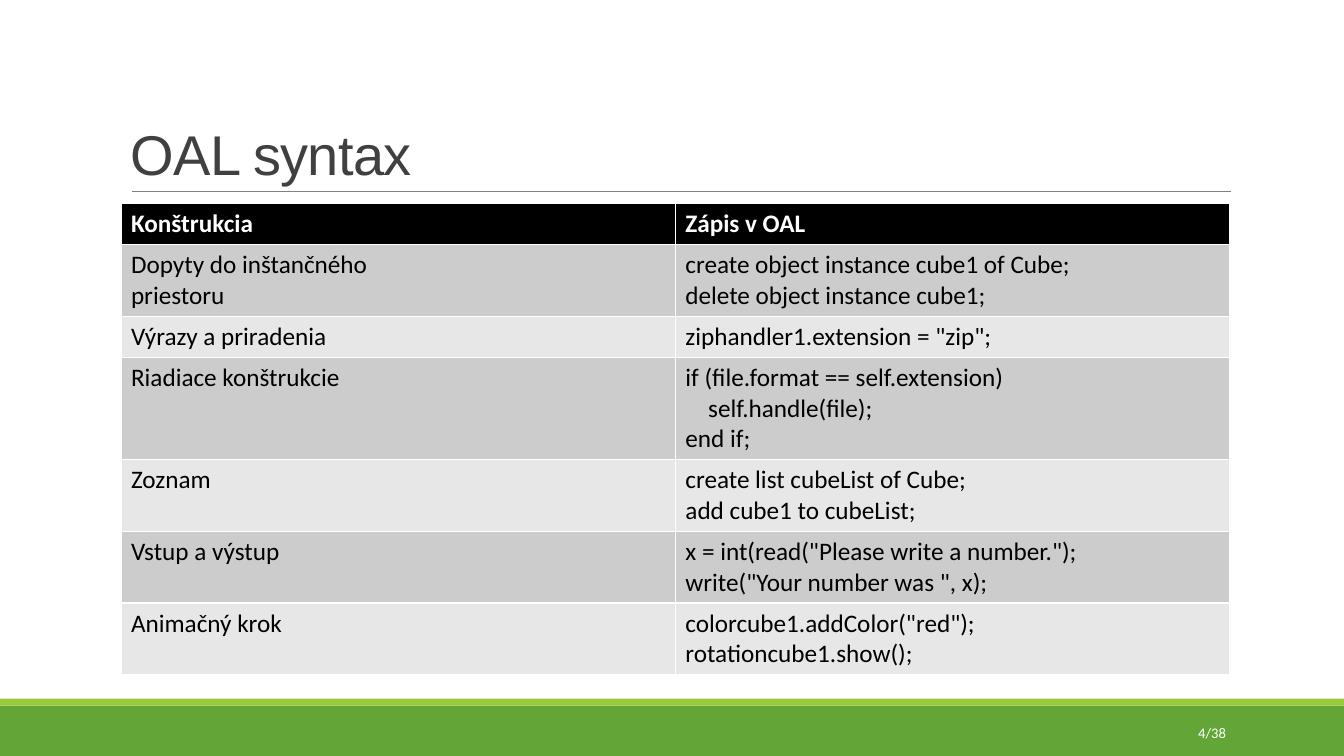
import pptx
import pptx.dml.color
import pptx.enum.shapes
import pptx.enum.text
import pptx.oxml.ns
import pptx.oxml.xmlchemy
import pptx.util

Pt = pptx.util.Pt
ALIGN = pptx.enum.text.PP_ALIGN
ANCHOR = pptx.enum.text.MSO_ANCHOR
ROWS = [
    ("Konštrukcia", "Zápis v OAL"),
    ("Dopyty do inštančného\npriestoru",
     "create object instance cube1 of Cube;\ndelete object instance cube1;"),
    ("Výrazy a priradenia", 'ziphandler1.extension = "zip";'),
    ("Riadiace konštrukcie",
     "if (file.format == self.extension)\n    self.handle(file);\nend if;"),
    ("Zoznam", "create list cubeList of Cube;\nadd cube1 to cubeList;"),
    ("Vstup a výstup",
     'x = int(read("Please write a number.");\nwrite("Your number was ", x);'),
    ("Animačný krok", 'colorcube1.addColor("red");\nrotationcube1.show();'),
]


def paint(fill, color):
    """Give a fill one solid colour."""
    fill.solid()
    fill.fore_color.rgb = pptx.dml.color.RGBColor.from_string(color)


def style(par, name, size, color, bold=False):
    """Set the font of a paragraph."""
    font = par.font
    font.name, font.size, font.bold = name, Pt(size), bold
    paint(font.fill, color)


def add_bar(slide, top, height, color):
    """Add a band across the whole slide."""
    bar = slide.shapes.add_shape(
        pptx.enum.shapes.MSO_SHAPE.RECTANGLE, 0, Pt(top), Pt(960), Pt(height))
    bar.shadow.inherit = False
    paint(bar.fill, color)
    bar.line.fill.background()


def add_rule(slide, left, right, top):
    """Add the thin line under the title."""
    rule = slide.shapes.add_connector(
        pptx.enum.shapes.MSO_CONNECTOR.STRAIGHT,
        Pt(left), Pt(top), Pt(right), Pt(top))
    paint(rule.line.fill, "808080")
    rule.line.width = Pt(0.5)
    rule._element.spPr.append(
        pptx.oxml.xmlchemy.OxmlElement("a:effectLst"))


def add_text(slide, text, box, anchor, align):
    """Add a text box and return its paragraph."""
    frame = slide.shapes.add_textbox(*map(Pt, box)).text_frame
    frame.word_wrap = True
    frame.vertical_anchor = anchor
    par = frame.paragraphs[0]
    par.text = text
    par.alignment = align
    return par


def add_title(slide, text):
    """Add the slide title with tight spacing."""
    par = add_text(slide, text, (86.4, 22.3, 792, 114.5),
                   ANCHOR.BOTTOM, ALIGN.LEFT)
    par.line_spacing = 0.85
    style(par, "Arial", 40, "404040")
    par._p.pPr.find(pptx.oxml.ns.qn("a:defRPr")).set("spc", "-50")


def add_grid(slide, rows):
    """Add the syntax table, each row as tall as its text."""
    grid = slide.shapes.add_table(
        len(rows), 2, Pt(86.4), Pt(145.6), Pt(792), Pt(332)).table
    for i, row in enumerate(rows):
        extra = max(text.count("\n") for text in row)
        grid.rows[i].height = Pt(29.2 + 22 * extra)
        head = i == 0
        shade = "000000" if head else ("E7E7E7", "CCCCCC")[i % 2]
        for j, text in enumerate(row):
            cell = grid.cell(i, j)
            paint(cell.fill, shade)
            par = cell.text_frame.paragraphs[0]
            par.text = text
            style(par, "Calibri", 18, "FFFFFF" if head else "000000", head)


def main():
    """Build the slide and save it."""
    deck = pptx.Presentation()
    deck.slide_width, deck.slide_height = Pt(960), Pt(540)
    slide = deck.slides.add_slide(deck.slide_layouts[6])
    add_bar(slide, 504, 36, "63A537")
    add_bar(slide, 499, 5, "99CB38")
    add_rule(slide, 94.3, 879, 136.8)
    add_title(slide, "OAL syntax")
    add_grid(slide, ROWS)
    page = add_text(slide, "4/38", (779.8, 508.6, 103, 28.8),
                    ANCHOR.MIDDLE, ALIGN.RIGHT)
    style(page, "Calibri", 10.5, "FFFFFF")
    deck.save("out.pptx")


if __name__ == "__main__":
    main()
